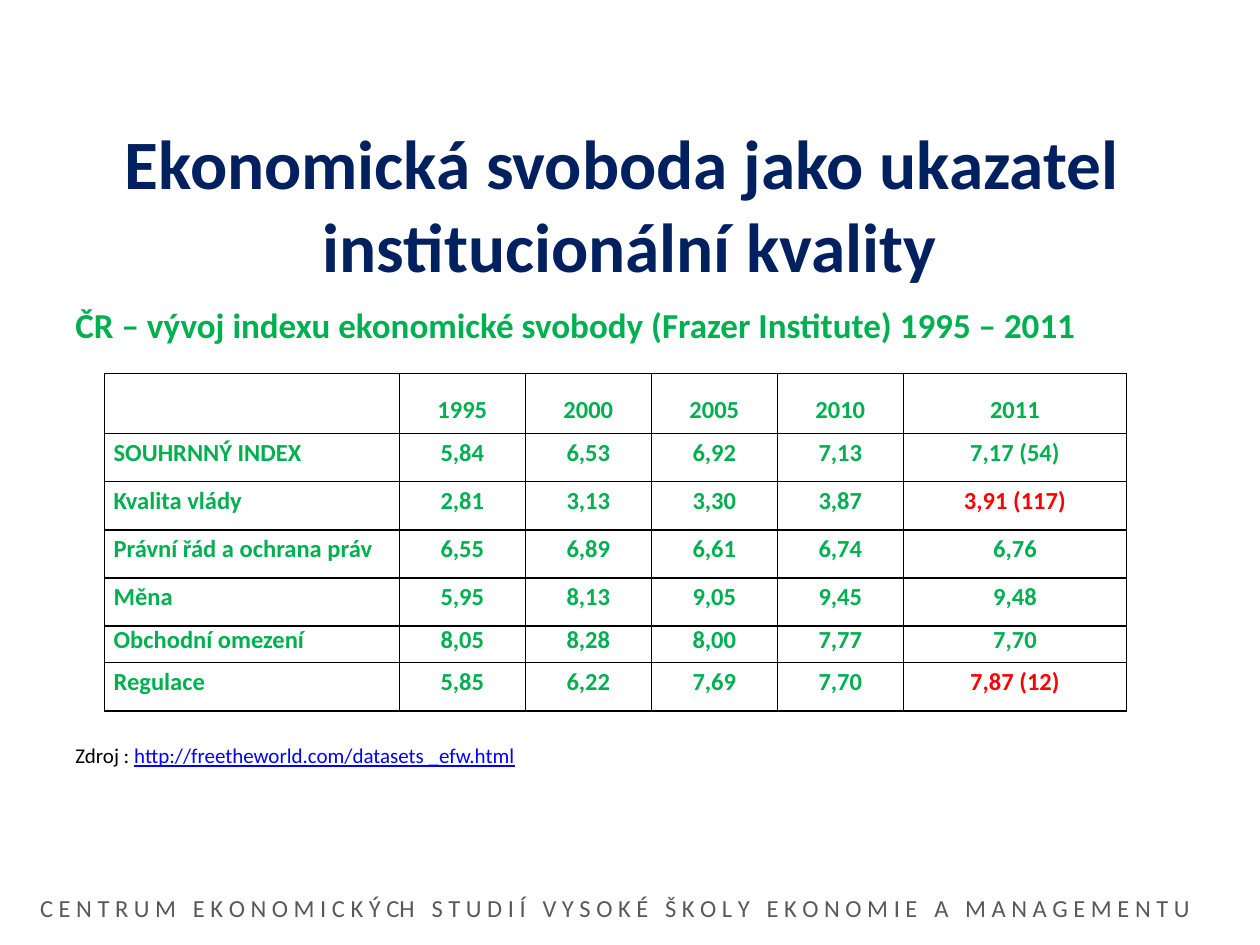
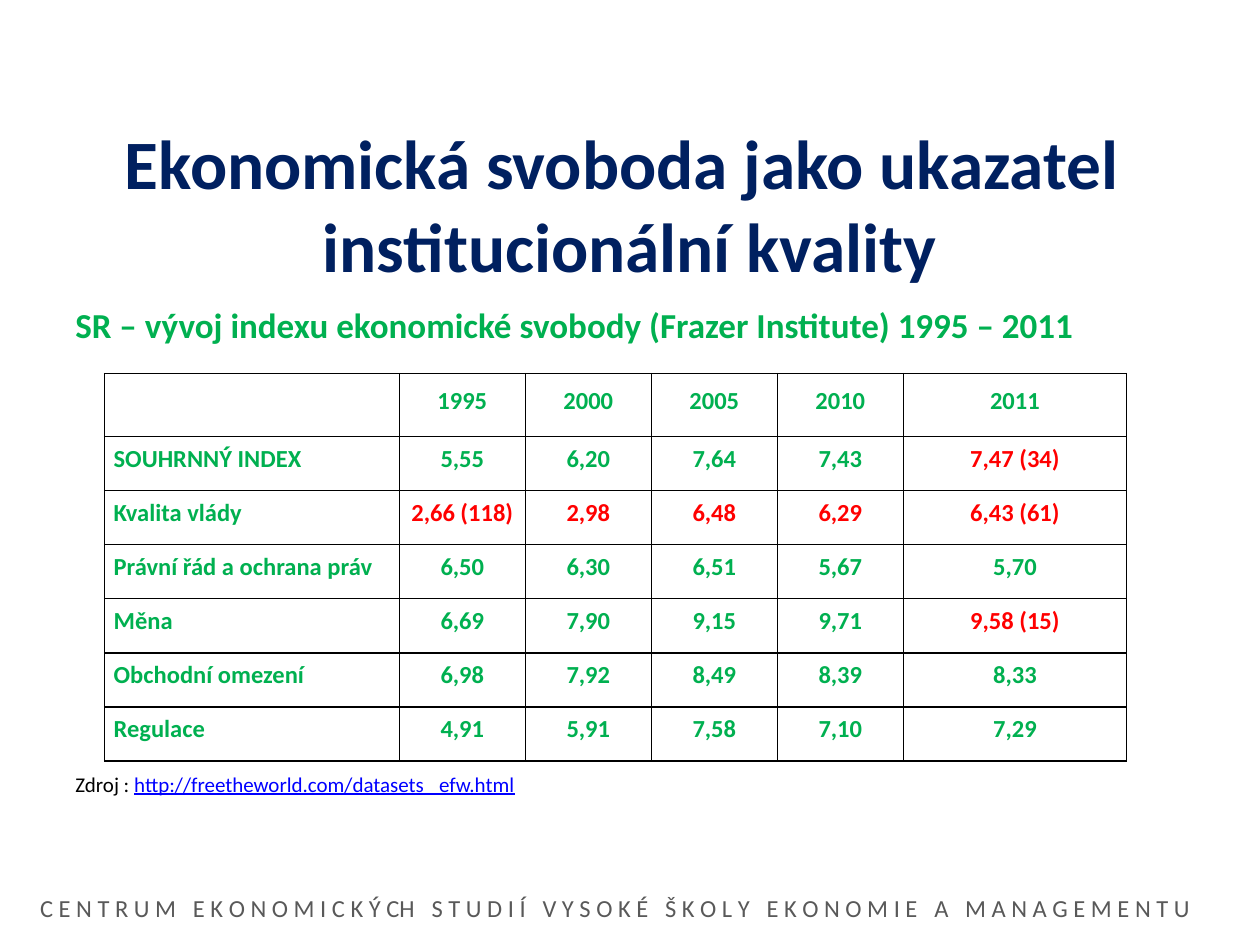
import collections
import dataclasses

import pptx
import pptx.dml.color
import pptx.enum.text
import pptx.oxml
import pptx.oxml.ns
import pptx.util
from pptx.util import Cm

Box = collections.namedtuple("Box", "left top width height")
ALIGN = pptx.enum.text.PP_ALIGN
ANCHOR = pptx.enum.text.MSO_ANCHOR


@dataclasses.dataclass(frozen=True)
class Theme:
    font: str = "Calibri"
    navy: str = "002060"
    green: str = "00B050"
    red: str = "FF0000"
    black: str = "000000"
    link: str = "0000FF"
    grey: str = "595959"
    title_size: float = 39.6
    subtitle_size: float = 20
    table_size: float = 14
    table_line: float = 12
    source_size: float = 12
    footer_size: float = 14
    footer_word_gap: float = 6.3
    border: float = 1


THEME = Theme()

SLIDE_WIDTH, SLIDE_HEIGHT = 25.4, 19.05
MARGIN = 1.27
TITLE_BOX = Box(MARGIN, 2.4, SLIDE_WIDTH - 2 * MARGIN, 3.4)
SUBTITLE_BOX = Box(MARGIN, 6.1, SLIDE_WIDTH - 2 * MARGIN, 0.9)
FOOTER_BOX = Box(0, 17.86, 24.8, 0.86)
TABLE_LEFT, TABLE_TOP = 2.11, 7.53
COLUMN_WIDTHS = [5.94] + 4 * [2.54] + [4.5]
SOURCE_HEIGHT = 0.6

TITLE = "Ekonomická svoboda jako ukazatel \vinstitucionální kvality"
SUBTITLE = "{} – vývoj indexu ekonomické svobody (Frazer Institute) 1995 – 2011"
SOURCE_LABEL = "Zdroj : "
SOURCE_ADDRESS = "http://freetheworld.com/datasets _efw.html"
FOOTER_WORDS = [
    "C E N T R U M", "E K O N O M I C K Ý CH", "S T U D I Í", "V Y S O K É",
    "Š K O L Y", "E K O N O M I E", "A", "M A N A G E M E N T U",
]
YEARS = ["1995", "2000", "2005", "2010", "2011"]
INDICATORS = [
    "SOUHRNNÝ INDEX", "Kvalita vlády", "Právní řád a ochrana práv",
    "Měna", "Obchodní omezení", "Regulace",
]

# "highlights" holds (row, column) positions in the table, header included.
COUNTRIES = [
    {
        "country": "ČR",
        "row_heights": [1.21, 0.97, 0.97, 0.97, 0.97, 0.74, 0.97],
        "source_top": 14.92,
        "highlights": {(2, 5), (6, 5)},
        "values": [
            ["5,84", "6,53", "6,92", "7,13", "7,17 (54)"],
            ["2,81", "3,13", "3,30", "3,87", "3,91 (117)"],
            ["6,55", "6,89", "6,61", "6,74", "6,76"],
            ["5,95", "8,13", "9,05", "9,45", "9,48"],
            ["8,05", "8,28", "8,00", "7,77", "7,70"],
            ["5,85", "6,22", "7,69", "7,70", "7,87 (12)"],
        ],
        "header_anchor": ANCHOR.MIDDLE,
    },
    {
        "country": "SR",
        "row_heights": [1.27] + 6 * [1.09],
        "source_top": 15.5,
        "highlights": {(1, 5), (4, 5)} | {(2, column) for column in range(1, 6)},
        "values": [
            ["5,55", "6,20", "7,64", "7,43", "7,47 (34)"],
            ["2,66 (118)", "2,98", "6,48", "6,29", "6,43 (61)"],
            ["6,50", "6,30", "6,51", "5,67", "5,70"],
            ["6,69", "7,90", "9,15", "9,71", "9,58 (15)"],
            ["6,98", "7,92", "8,49", "8,39", "8,33"],
            ["4,91", "5,91", "7,58", "7,10", "7,29"],
        ],
        "header_anchor": ANCHOR.TOP,
    },
]


def apply_format(target, values):
    for name, value in values.items():
        setattr(target, name, value)


def format_font(font, size, color, **values):
    apply_format(font, {"name": THEME.font, "size": pptx.util.Pt(size), **values})
    font.color.rgb = pptx.dml.color.RGBColor.from_string(color)


def add_text_box(slide, box, alignment=ALIGN.LEFT):
    """Add an empty, vertically centred text box and return its paragraph."""
    shape = slide.shapes.add_textbox(*map(Cm, box))
    apply_format(shape.text_frame, {
        "word_wrap": True,
        "vertical_anchor": ANCHOR.MIDDLE,
        "margin_top": 0,
        "margin_bottom": 0,
    })
    paragraph = shape.text_frame.paragraphs[0]
    paragraph.alignment = alignment
    return paragraph


def add_run(paragraph, text, size, color, **values):
    run = paragraph.add_run()
    run.text = text
    format_font(run.font, size, color, **values)
    return run


def add_title(slide, box):
    paragraph = add_text_box(slide, box, ALIGN.CENTER)
    for index, line in enumerate(TITLE.split("\v")):
        if index:
            paragraph.add_line_break()
        add_run(paragraph, line, THEME.title_size, THEME.navy, bold=True)


def add_subtitle(slide, box, country):
    paragraph = add_text_box(slide, box)
    add_run(paragraph, SUBTITLE.format(country), THEME.subtitle_size, THEME.green, bold=True)


def add_source(slide, box):
    paragraph = add_text_box(slide, box)
    add_run(paragraph, SOURCE_LABEL, THEME.source_size, THEME.black)
    add_run(paragraph, SOURCE_ADDRESS, THEME.source_size, THEME.link, underline=True)


def add_footer(slide, box):
    """Write the letter-spaced institute name with wider gaps between words."""
    paragraph = add_text_box(slide, box, ALIGN.CENTER)
    for index, word in enumerate(FOOTER_WORDS):
        if index:
            gap = add_run(paragraph, " ", THEME.footer_size, THEME.grey)
            gap.font._element.set("spc", str(round(THEME.footer_word_gap * 100)))
        add_run(paragraph, word, THEME.footer_size, THEME.grey)


def set_cell_borders(cell):
    properties = cell._tc.get_or_add_tcPr()
    for position, side in enumerate(("lnL", "lnR", "lnT", "lnB")):
        properties.insert(position, pptx.oxml.parse_xml(
            f'<a:{side} {pptx.oxml.ns.nsdecls("a")} w="{pptx.util.Pt(THEME.border)}">'
            f'<a:solidFill><a:srgbClr val="{THEME.black}"/></a:solidFill></a:{side}>'
        ))


def fill_cell(cell, text, color, alignment, **values):
    cell.text = text
    apply_format(cell, {
        "vertical_anchor": ANCHOR.MIDDLE,
        "margin_left": Cm(0.18),
        "margin_right": Cm(0.18),
        "margin_top": 0,
        "margin_bottom": 0,
        **values,
    })
    cell.fill.background()
    set_cell_borders(cell)
    paragraph = cell.text_frame.paragraphs[0]
    apply_format(paragraph, {
        "alignment": alignment,
        "line_spacing": pptx.util.Pt(THEME.table_line),
    })
    format_font(paragraph.font, THEME.table_size, THEME.green, bold=True)
    for run in paragraph.runs:
        format_font(run.font, THEME.table_size, color, bold=True)


def add_index_table(slide, box, data):
    rows = [[""] + YEARS]
    rows += [[name] + values for name, values in zip(INDICATORS, data["values"])]
    table = slide.shapes.add_table(len(rows), len(rows[0]), *map(Cm, box)).table
    apply_format(table, {"first_row": False, "horz_banding": False})
    for column, width in zip(table.columns, COLUMN_WIDTHS):
        column.width = Cm(width)
    for row, height in zip(table.rows, data["row_heights"]):
        row.height = Cm(height)
    header_format = {
        "vertical_anchor": data["header_anchor"],
        "margin_top": pptx.util.Pt(THEME.table_line),
    }
    for row_index, row in enumerate(rows):
        for column_index, text in enumerate(row):
            highlighted = (row_index, column_index) in data["highlights"]
            fill_cell(
                table.cell(row_index, column_index),
                text,
                THEME.red if highlighted else THEME.green,
                ALIGN.CENTER if column_index else ALIGN.LEFT,
                **({} if row_index else header_format),
            )


def add_country_slide(presentation, data):
    slide = presentation.slides.add_slide(presentation.slide_layouts[6])
    add_title(slide, TITLE_BOX)
    add_subtitle(slide, SUBTITLE_BOX, data["country"])
    table_box = Box(TABLE_LEFT, TABLE_TOP, sum(COLUMN_WIDTHS), sum(data["row_heights"]))
    add_index_table(slide, table_box, data)
    add_source(slide, SUBTITLE_BOX._replace(top=data["source_top"], height=SOURCE_HEIGHT))
    add_footer(slide, FOOTER_BOX)


def main():
    presentation = pptx.Presentation()
    apply_format(presentation, {
        "slide_width": Cm(SLIDE_WIDTH),
        "slide_height": Cm(SLIDE_HEIGHT),
    })
    for data in COUNTRIES:
        add_country_slide(presentation, data)
    presentation.save("out.pptx")


if __name__ == "__main__":
    main()
